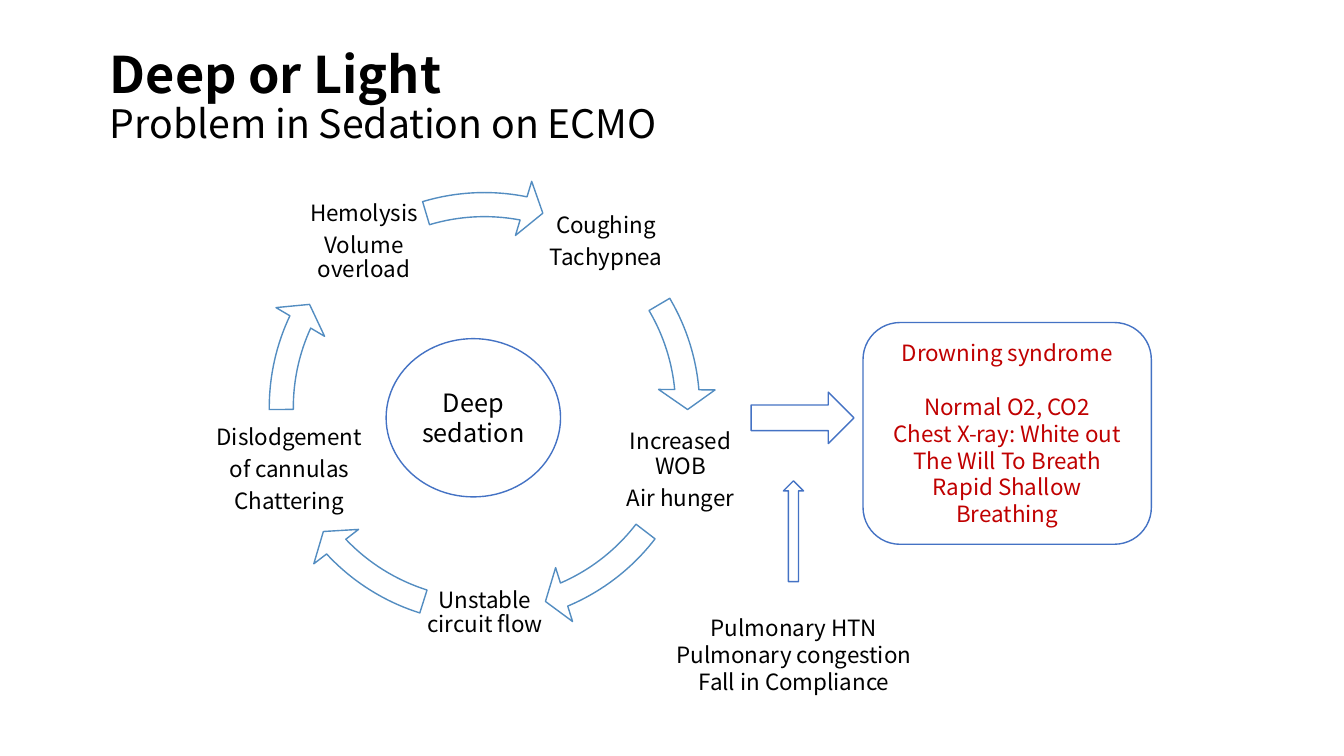
from dataclasses import dataclass

from pptx import Presentation
from pptx.dml.color import RGBColor
from pptx.enum.shapes import MSO_SHAPE
from pptx.enum.text import MSO_ANCHOR, MSO_AUTO_SIZE, PP_ALIGN
from pptx.util import Inches, Pt


@dataclass(frozen=True)
class Theme:
    font: str = "Noto Sans CJK KR"
    ink: RGBColor = RGBColor(0x00, 0x00, 0x00)
    alert: RGBColor = RGBColor(0xC0, 0x00, 0x00)
    paper: RGBColor = RGBColor(0xFF, 0xFF, 0xFF)
    edge: RGBColor = RGBColor(0x44, 0x72, 0xC4)
    ring: RGBColor = RGBColor(0x53, 0x8D, 0xC1)
    title: int = 36
    subtitle: int = 28
    hub: int = 18
    body: int = 16


THEME = Theme()

# Steps of the cycle: left, top, width, lines
STEPS = [
    (5.4, 1.79, 1.22, ["Coughing", "Tachypnea"]),
    (6.14, 4.06, 1.22, ["Increased WOB", "Air hunger"]),
    (4.2, 5.47, 1.22, ["Unstable circuit flow"]),
    (2.1, 4.06, 1.54, ["Dislodgement", "of cannulas", "Chattering"]),
    (3, 1.79, 1.22, ["Hemolysis", "Volume overload"]),
]

# Arrows of the cycle: start and end angle in degrees
ARCS = [
    (329.43, 354.9),
    (37.55, 66.92),
    (107.48, 136.86),
    (179.51, 204.98),
    (253.3, 281.1),
]

CAUSES = ["Pulmonary HTN", "Pulmonary congestion", "Fall in Compliance"]
SIGNS = ["Normal O2, CO2", "Chest X-ray: White out", "The Will To Breath",
         "Rapid Shallow Breathing"]


def add_run(para, text, size, color=THEME.ink, bold=False):
    run = para.add_run()
    run.text = text
    font = run.font
    font.name, font.size, font.bold = THEME.font, Pt(size), bold
    font.color.rgb = color


def fill_text(frame, lines, size=THEME.body, color=THEME.ink):
    """Write centred lines and return their paragraphs."""
    frame.word_wrap = True
    frame.vertical_anchor = MSO_ANCHOR.MIDDLE
    for i, line in enumerate(lines):
        para = frame.add_paragraph() if i else frame.paragraphs[0]
        para.alignment = PP_ALIGN.CENTER
        add_run(para, line, size, color)
    return frame.paragraphs


def add_label(slide, box, lines):
    frame = slide.shapes.add_textbox(*map(Inches, box)).text_frame
    return frame, fill_text(frame, lines)


def add_step(slide, left, top, width, lines):
    frame, paras = add_label(slide, (left, top, width, 1.22), lines)
    frame.margin_left = frame.margin_right = Inches(0.02)
    frame.margin_top = frame.margin_bottom = Inches(0.02)
    for para in paras:
        para.line_spacing = 0.9
        para.space_after = Pt(0.35 * THEME.body)


def add_shape(slide, kind, box, line=THEME.edge):
    shape = slide.shapes.add_shape(kind, *map(Inches, box))
    shape.shadow.inherit = False
    shape.fill.solid()
    shape.fill.fore_color.rgb = THEME.paper
    shape.line.color.rgb = line
    shape.line.width = Pt(1)
    return shape


def add_arc(slide, start, end):
    arc = add_shape(slide, MSO_SHAPE.CIRCULAR_ARROW,
                    (2.51, 1.75, 4.59, 4.59), THEME.ring)
    # Angles are stored as 60000ths of a degree over 100000
    values = (5.2 / 100, 5.6 * 0.6, end * 0.6, start * 0.6, 6.1 / 100)
    for i, value in enumerate(values):
        arc.adjustments[i] = value


def set_title(slide):
    title = slide.shapes.title
    title.left, title.top = Inches(0.99), Inches(0.35)
    title.width, title.height = Inches(9), Inches(1.25)
    frame = title.text_frame
    frame.auto_size = MSO_AUTO_SIZE.NONE
    frame.vertical_anchor = MSO_ANCHOR.MIDDLE
    para = frame.paragraphs[0]
    para.alignment = PP_ALIGN.LEFT
    para.line_spacing = 0.9
    add_run(para, "Deep or Light", THEME.title, bold=True)
    para.add_line_break()
    add_run(para, "Problem in Sedation on ECMO", THEME.subtitle)


def main():
    deck = Presentation()
    deck.slide_width, deck.slide_height = Inches(13.33), Inches(7.5)
    slide = deck.slides.add_slide(deck.slide_layouts[5])
    set_title(slide)

    # Cycle around the hub
    for step, arc in zip(STEPS, ARCS):
        add_step(slide, *step)
        add_arc(slide, *arc)
    hub = add_shape(slide, MSO_SHAPE.OVAL, (3.83, 3.36, 1.73, 1.57))
    fill_text(hub.text_frame, ["Deep sedation"], THEME.hub)

    # Outcome
    add_shape(slide, MSO_SHAPE.RIGHT_ARROW, (7.45, 3.89, 1.02, 0.51))
    card = add_shape(slide, MSO_SHAPE.ROUNDED_RECTANGLE,
                     (8.56, 3.2, 2.86, 2.2))
    paras = fill_text(card.text_frame, ["Drowning syndrome", *SIGNS],
                      color=THEME.alert)
    paras[0].space_after = Pt(19)

    # Contributing causes
    add_shape(slide, MSO_SHAPE.UP_ARROW, (7.77, 4.77, 0.2, 1))
    add_label(slide, (6.34, 6, 3.07, 0.98), CAUSES)

    deck.save("out.pptx")


if __name__ == "__main__":
    main()
